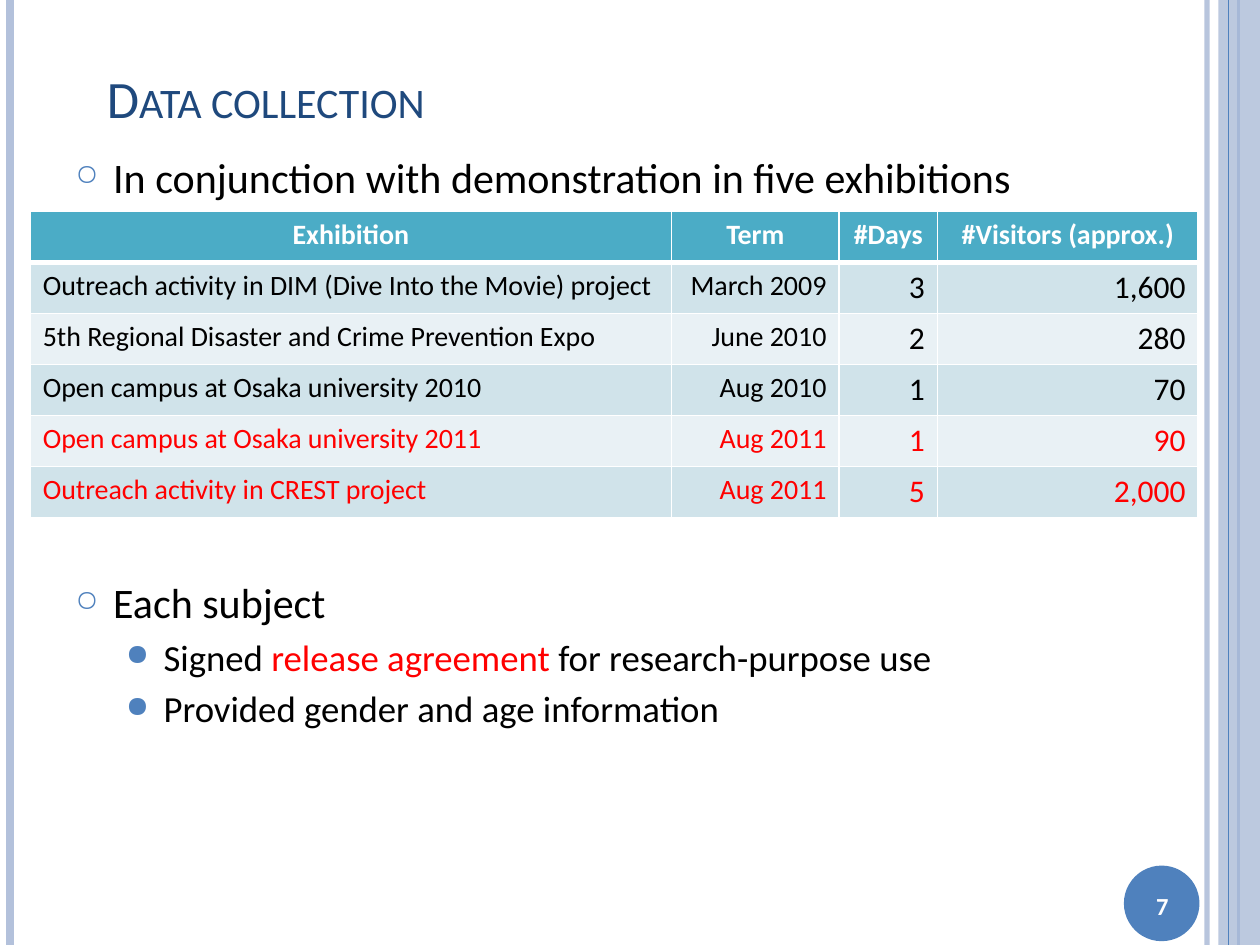
from lxml import etree
from pptx import Presentation
from pptx import util as u
from pptx.dml.color import RGBColor
from pptx.enum import shapes, text
from pptx.oxml import ns

HUES = {
    "white": "FFFFFF", "black": "000000", "red": "FF0000", "navy": "1F497D",
    "blue": "4F81BD", "pale": "B3C1DB", "head": "4BACC6",
    "odd": "D0E3EA", "even": "E9F1F5",
}
FONT = "Calibri"
ALIGN = text.PP_ALIGN
COLS = [5.09, 1.33, 0.78, 2.07]
HEADS = ["Exhibition", "Term", "#Days", "#Visitors (approx.)"]
ROWS = [
    ("Outreach activity in DIM (Dive Into the Movie) project", "March 2009", "3", "1,600", "black"),
    ("5th Regional Disaster and Crime Prevention Expo", "June 2010", "2", "280", "black"),
    ("Open campus at Osaka university 2010", "Aug 2010", "1", "70", "black"),
    ("Open campus at Osaka university 2011", "Aug 2011", "1", "90", "red"),
    ("Outreach activity in CREST project", "Aug 2011", "5", "2,000", "red"),
]
# Bullet level: mark, mark size in percent, left indent, text size, space before
LEVELS = [("○", 70, 0.3, 24, 6), ("●", 80, 0.7, 21, 4.2)]


def rgb(hue):
    return RGBColor.from_string(HUES[hue])


def add(parent, tag, **attrs):
    return etree.SubElement(parent, ns.qn(tag), attrs)


def fade(fill, alpha):
    """Make a solid fill partly transparent; alpha is in percent."""
    color = fill._xPr.find(".//" + ns.qn("a:srgbClr"))
    add(color, "a:alpha", val=str(alpha * 1000))


def add_run(para, words, size, hue="black", bold=False):
    run = para.add_run()
    run.text = words
    font = run.font
    font.name, font.size, font.bold = FONT, u.Pt(size), bold
    font.color.rgb = rgb(hue)
    return run


def add_box(slide, left, top, width, height, anchor=text.MSO_ANCHOR.TOP):
    box = slide.shapes.add_textbox(*map(u.Inches, (left, top, width, height)))
    frame = box.text_frame
    frame.word_wrap = True
    frame.vertical_anchor = anchor
    return frame


def add_rule(slide, left, hue, width, alpha=100):
    """Draw a vertical line over the full height of the slide."""
    x = u.Inches(left)
    rule = slide.shapes.add_connector(
        shapes.MSO_CONNECTOR.STRAIGHT, x, 0, x, u.Inches(7.5))
    rule.line.width = u.Pt(width)
    rule.line.color.rgb = rgb(hue)
    if alpha < 100:
        fade(rule.line.fill, alpha)
    add(rule._element.spPr, "a:effectLst")


def add_block(slide, kind, left, top, width, height, hue, alpha=100):
    block = slide.shapes.add_shape(
        kind, *map(u.Inches, (left, top, width, height)))
    block.shadow.inherit = False
    block.fill.solid()
    block.fill.fore_color.rgb = rgb(hue)
    if alpha < 100:
        fade(block.fill, alpha)
    block.line.fill.background()


def add_list(slide, top, height, items):
    """Write bullets; each item is a level and its (words, hue) runs."""
    frame = add_box(slide, 0.5, top, 8.17, height)
    for i, (level, runs) in enumerate(items):
        para = frame.add_paragraph() if i else frame.paragraphs[0]
        mark, scale, indent, size, gap = LEVELS[level]
        para.level = level
        if i:
            para.space_before = u.Pt(gap)
        props = para._p.get_or_add_pPr()
        props.set("marL", str(u.Inches(indent)))
        props.set("indent", str(u.Inches(-0.3)))
        color = add(props, "a:buClr")
        add(color, "a:srgbClr", val=HUES["blue"])
        add(props, "a:buSzPct", val=str(scale * 1000))
        add(props, "a:buChar", char=mark)
        for words, hue in runs:
            add_run(para, words, size, hue)


def set_edges(cell, top, bottom):
    """Give a cell white borders; top and bottom widths are in points."""
    props = cell._tc.get_or_add_tcPr()
    for side, width in (("L", 1), ("R", 1), ("T", top), ("B", bottom)):
        edge = add(props, "a:ln" + side, w=str(u.Pt(width)))
        add(add(edge, "a:solidFill"), "a:srgbClr", val=HUES["white"])


def set_cell(cell, words, size, hue, fill, align, bold=False, top=1, bottom=1):
    set_edges(cell, top, bottom)
    cell.fill.solid()
    cell.fill.fore_color.rgb = rgb(fill)
    para = cell.text_frame.paragraphs[0]
    para.alignment = align
    add_run(para, words, size, hue, bold)


def add_grid(slide):
    count = len(ROWS) + 1
    table = slide.shapes.add_table(
        count, len(COLS), *map(u.Inches, (0.24, 1.68, sum(COLS), 2.43))).table
    for col, width in zip(table.columns, COLS):
        col.width = u.Inches(width)
    for c, words in enumerate(HEADS):
        set_cell(table.cell(0, c), words, 16, "white", "head",
                 ALIGN.CENTER, bold=True, bottom=3)
    for r, (*cells, hue) in enumerate(ROWS, 1):
        for c, words in enumerate(cells):
            set_cell(table.cell(r, c), words, 16 if c < 2 else 18, hue,
                     "odd" if r % 2 else "even",
                     ALIGN.RIGHT if c else ALIGN.LEFT,
                     top=3 if r == 1 else 1)


def add_frame(slide):
    """Draw the side stripes and the disc of the page number."""
    add_rule(slide, 9.58, "pale", 3, 93)
    add_rule(slide, 0.08, "pale", 4.5)
    add_rule(slide, 9.83, "blue", 1.5)
    add_block(slide, shapes.MSO_SHAPE.RECTANGLE, 9.67, 0, 0.33, 7.5, "pale", 87)
    add_rule(slide, 9.75, "blue", 0.75)
    add_block(slide, shapes.MSO_SHAPE.OVAL, 8.92, 6.87, 0.6, 0.6, "blue")


def main():
    deck = Presentation()
    deck.slide_width, deck.slide_height = u.Inches(10), u.Inches(7.5)
    slide = deck.slides.add_slide(deck.slide_layouts[6])
    add_frame(slide)

    title = add_box(slide, 0.75, 0.36, 8.17, 0.71, text.MSO_ANCHOR.BOTTOM)
    run = add_run(title.paragraphs[0], "Data collection", 30, "navy")
    run.font._element.set("cap", "small")

    add_list(slide, 1.15, 0.5, [
        (0, [("In conjunction with demonstration in five exhibitions", "black")]),
    ])
    add_list(slide, 4.53, 2.55, [
        (0, [("Each subject", "black")]),
        (1, [("Signed ", "black"), ("release agreement ", "red"),
             ("for research-purpose use", "black")]),
        (1, [("Provided gender and age information", "black")]),
    ])

    page = add_box(slide, 8.89, 6.9, 0.67, 0.57, text.MSO_ANCHOR.MIDDLE)
    page.paragraphs[0].alignment = ALIGN.CENTER
    add_run(page.paragraphs[0], "7", 14, "white", bold=True)

    add_grid(slide)
    deck.save("out.pptx")


if __name__ == "__main__":
    main()
